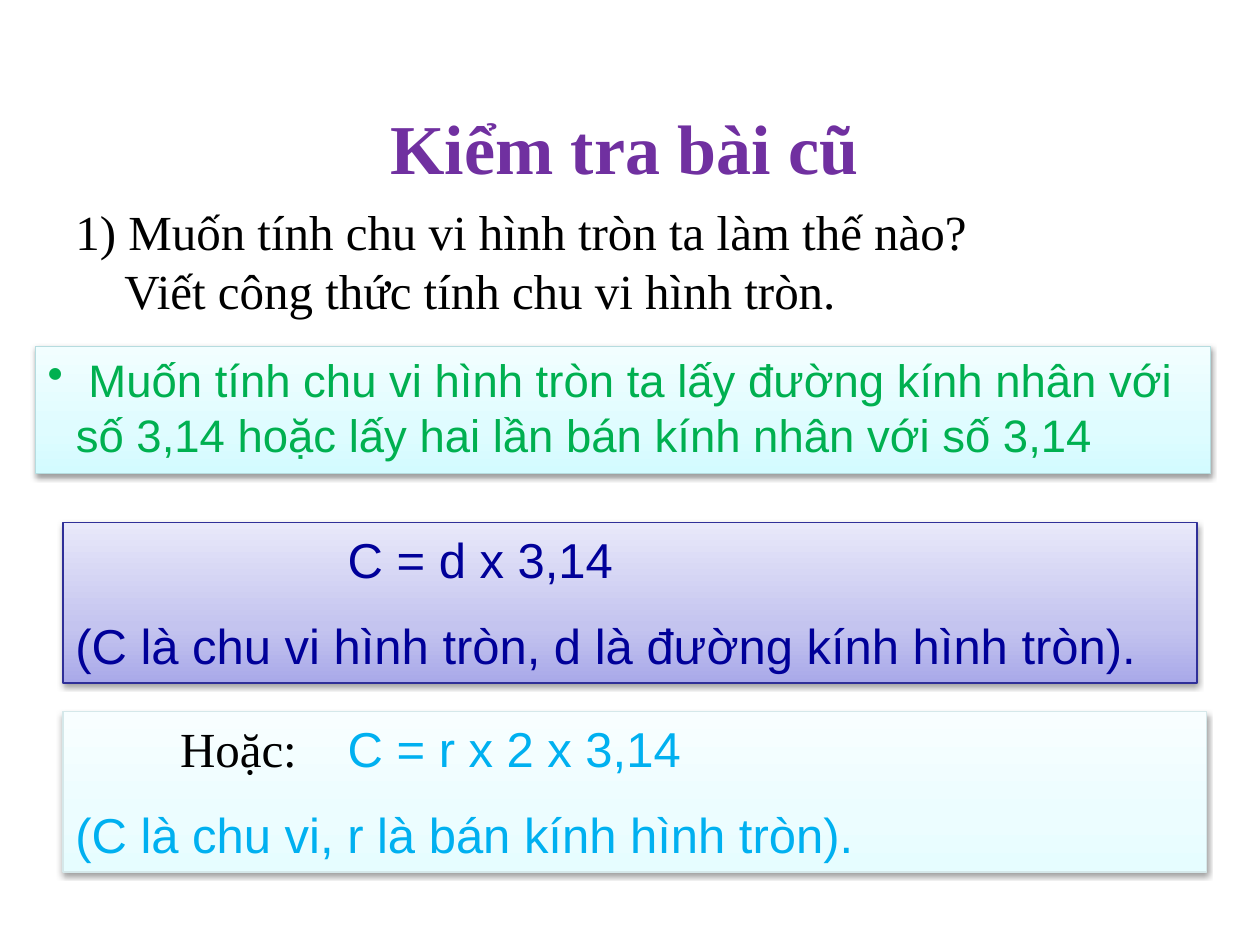
from dataclasses import dataclass
from typing import Optional

import copy
import lxml.etree
import pptx
import pptx.dml.color
import pptx.enum.shapes
import pptx.enum.text
import pptx.oxml
import pptx.oxml.ns
import pptx.util

Cm = pptx.util.Cm
Pt = pptx.util.Pt
RGBColor = pptx.dml.color.RGBColor

BLACK = RGBColor(0x00, 0x00, 0x00)
PURPLE = RGBColor(0x70, 0x30, 0xA0)
GREEN = RGBColor(0x00, 0xB0, 0x50)
NAVY = RGBColor(0x00, 0x00, 0x99)
SKY = RGBColor(0x00, 0xB0, 0xF0)
AQUA_STOPS = (RGBColor(0xD3, 0xFB, 0xFF), RGBColor(0xDF, 0xFC, 0xFF), RGBColor(0xF2, 0xFE, 0xFF))
LAVENDER_STOPS = (RGBColor(0xA9, 0xA9, 0xE9), RGBColor(0xC4, 0xC4, 0xEF), RGBColor(0xE8, 0xE8, 0xFA))
PALE_STOPS = (RGBColor(0xE6, 0xFD, 0xFF), RGBColor(0xEC, 0xFD, 0xFF), RGBColor(0xF8, 0xFE, 0xFF))
AQUA_LINE = RGBColor(0xB6, 0xDC, 0xDF)
NAVY_LINE = RGBColor(0x2F, 0x2F, 0x98)
PALE_LINE = RGBColor(0xD5, 0xE8, 0xEA)

SERIF = "Times New Roman"
SANS = "Arial"
STOP_POSITIONS = (0, 0.35, 1)
FORMULA_INDENT = Cm(5.49)
SHADOW_XML = (
    f'<a:effectLst {pptx.oxml.ns.nsdecls("a")}>'
    '<a:outerShdw blurRad="40000" dist="20000" dir="5400000" rotWithShape="0">'
    '<a:srgbClr val="000000"><a:alpha val="38000"/></a:srgbClr>'
    '</a:outerShdw></a:effectLst>'
)


@dataclass(frozen=True)
class Line:
    text: str
    indent: int = 0
    margin: int = 0
    space_before: int = 0
    bullet: Optional[str] = None


@dataclass(frozen=True)
class Panel:
    stops: tuple[RGBColor, ...]
    outline: RGBColor


@dataclass(frozen=True)
class Block:
    left: float
    top: float
    width: float
    height: float
    lines: tuple[Line, ...]
    font: dict
    panel: Optional[Panel] = None


def text_format(name: str, color: RGBColor, size: int = 28, bold: bool = False) -> dict:
    return {"name": name, "size": Pt(size), "bold": bold, "color": color}


BLOCKS = (
    Block(1.27, 3.94, 19.89, 2.62, (
        Line("1) Muốn tính chu vi hình tròn ta làm thế nào?"),
        Line("Viết công thức tính chu vi hình tròn.", indent=Cm(0.99)),
    ), text_format(SERIF, BLACK)),
    Block(0.71, 6.98, 23.7, 2.57, (
        Line(" Muốn tính chu vi hình tròn ta lấy đường kính nhân với số 3,14 "
             "hoặc lấy hai lần bán kính nhân với số 3,14",
             indent=Cm(-0.57), margin=Cm(0.57), bullet="•"),
    ), text_format(SANS, GREEN, 26), Panel(AQUA_STOPS, AQUA_LINE)),
    Block(1.27, 10.54, 22.86, 3.23, (
        Line("C = d x 3,14", indent=FORMULA_INDENT),
        Line("(C là chu vi hình tròn, d là đường kính hình tròn).", space_before=16),
    ), text_format(SANS, NAVY), Panel(LAVENDER_STOPS, NAVY_LINE)),
    Block(1.27, 14.35, 23.06, 3.23, (
        Line("C = r x 2 x 3,14", indent=FORMULA_INDENT),
        Line("(C là chu vi, r là bán kính hình tròn).", space_before=16),
    ), text_format(SANS, SKY), Panel(PALE_STOPS, PALE_LINE)),
    Block(3.38, 14.35, 2.97, 1.45, (Line("Hoặc:"),), text_format(SERIF, BLACK)),
    Block(7.62, 1.98, 10.59, 1.96, (Line("Kiểm tra bài cũ"),),
          text_format(SERIF, PURPLE, 40, True)),
)


def style_panel(shape, panel: Panel) -> None:
    shape.fill.gradient()
    shape.fill.gradient_angle = 90
    stop_list = shape.element.spPr.find(".//" + pptx.oxml.ns.qn("a:gsLst"))
    stop_list.append(copy.deepcopy(stop_list[-1]))
    for stop, position, color in zip(shape.fill.gradient_stops, STOP_POSITIONS, panel.stops):
        stop.position = position
        stop.color.rgb = color
    shape.line.color.rgb = panel.outline
    shape.line.width = Pt(0.75)
    shape.element.spPr.append(pptx.oxml.parse_xml(SHADOW_XML))


def write_line(paragraph, line: Line, font_format: dict) -> None:
    properties = paragraph._p.get_or_add_pPr()
    properties.set("marL", str(line.margin))
    properties.set("indent", str(line.indent))
    if line.bullet:
        bullet = lxml.etree.SubElement(properties, pptx.oxml.ns.qn("a:buChar"))
        bullet.set("char", line.bullet)
    paragraph.alignment = pptx.enum.text.PP_ALIGN.LEFT
    paragraph.space_before = Pt(line.space_before)
    run = paragraph.add_run()
    run.text = line.text
    for attribute, value in font_format.items():
        if attribute == "color":
            run.font.color.rgb = value
        else:
            setattr(run.font, attribute, value)


def draw_block(slide, block: Block) -> None:
    bounds = [Cm(value) for value in (block.left, block.top, block.width, block.height)]
    if block.panel:
        shape = slide.shapes.add_shape(pptx.enum.shapes.MSO_SHAPE.RECTANGLE, *bounds)
        style_panel(shape, block.panel)
    else:
        shape = slide.shapes.add_textbox(*bounds)
    frame = shape.text_frame
    frame_format = {
        "word_wrap": True,
        "auto_size": pptx.enum.text.MSO_AUTO_SIZE.SHAPE_TO_FIT_TEXT,
        "vertical_anchor": pptx.enum.text.MSO_ANCHOR.TOP,
    }
    for attribute, value in frame_format.items():
        setattr(frame, attribute, value)
    for index, line in enumerate(block.lines):
        paragraph = frame.add_paragraph() if index else frame.paragraphs[0]
        write_line(paragraph, line, block.font)


def main() -> None:
    presentation = pptx.Presentation()
    presentation.slide_width = Cm(25.4)
    presentation.slide_height = Cm(19.05)
    slide = presentation.slides.add_slide(presentation.slide_layouts[6])
    for block in BLOCKS:
        draw_block(slide, block)
    presentation.save("out.pptx")


if __name__ == "__main__":
    main()
